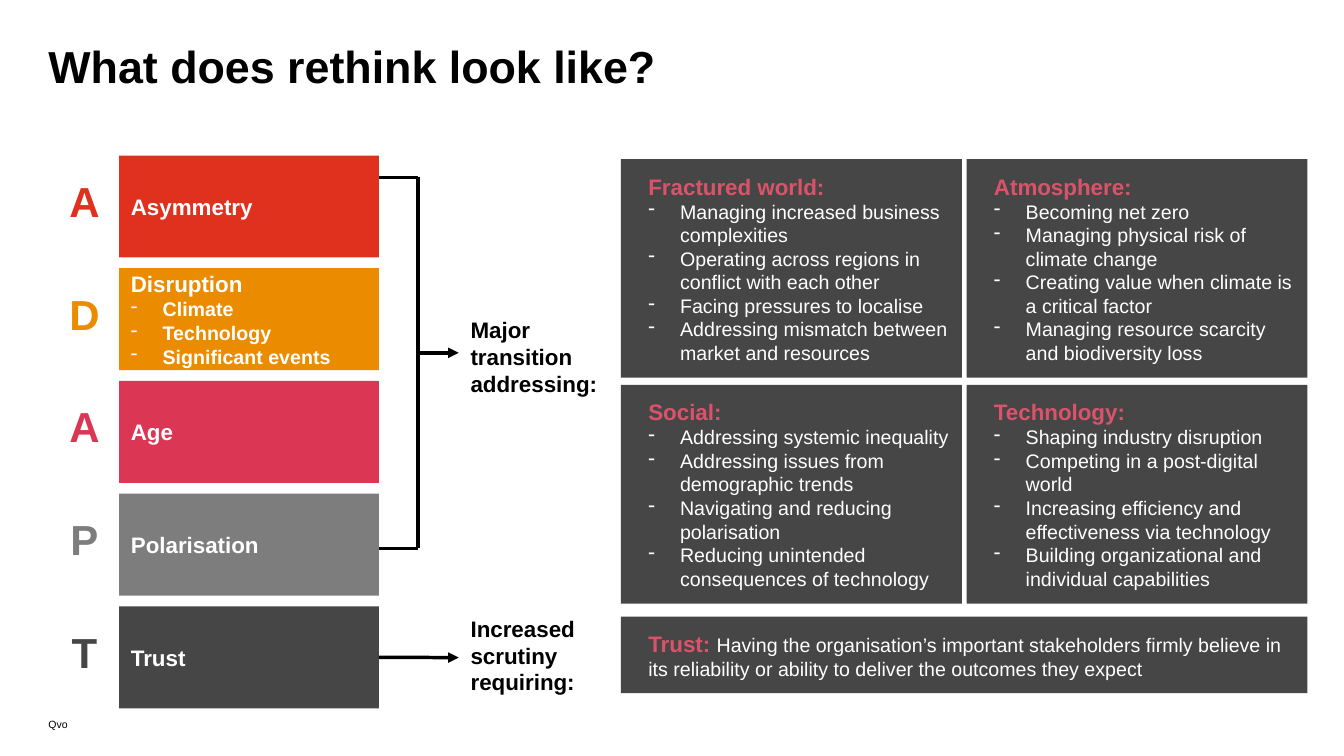
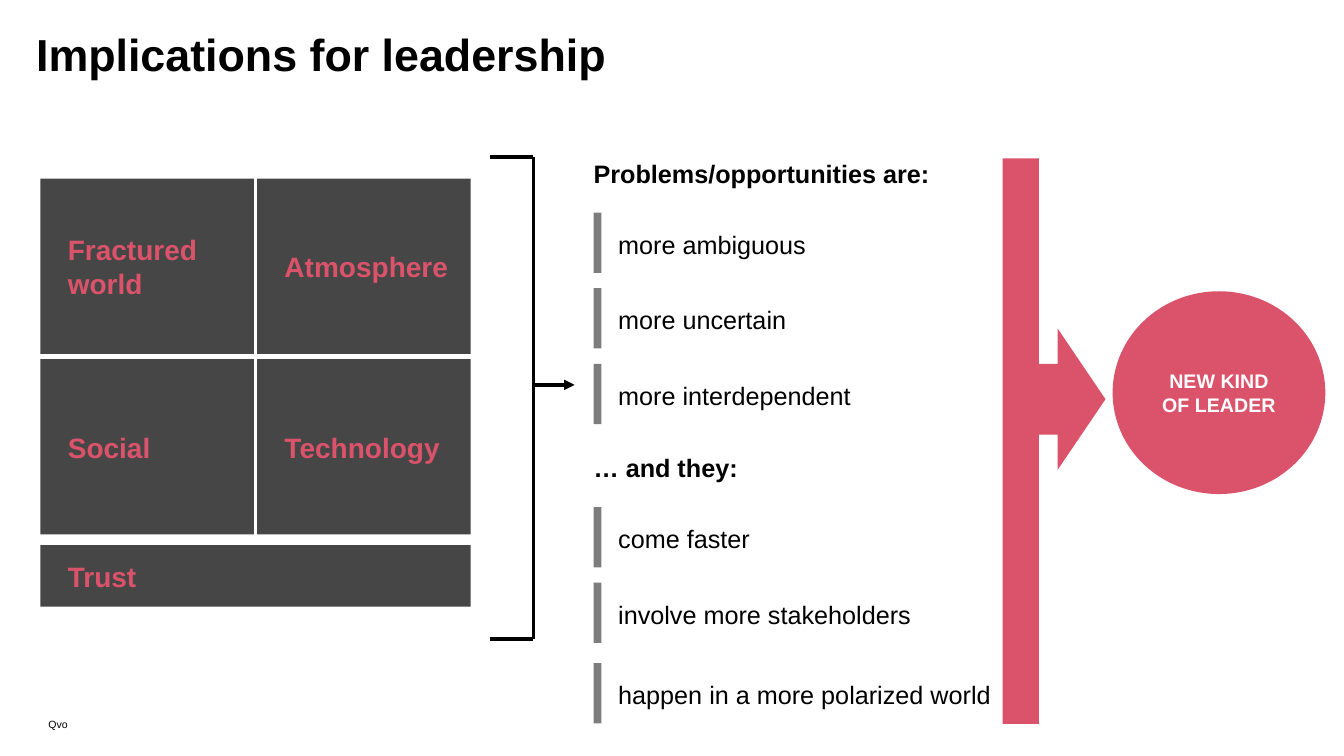
from lxml import etree
from pptx import Presentation
from pptx import util as u
from pptx.dml.color import RGBColor
from pptx.enum import shapes as sh, text as tx
from pptx.oxml import ns

Cm, Pt = u.Cm, u.Pt
FONT = "Arial"
BLACK = RGBColor(0x00, 0x00, 0x00)
WHITE = RGBColor(0xFF, 0xFF, 0xFF)
CHARCOAL = RGBColor(0x46, 0x46, 0x46)
GREY = RGBColor(0x7D, 0x7D, 0x7D)
RED = RGBColor(0xE0, 0x30, 0x1E)
ORANGE = RGBColor(0xEB, 0x8C, 0x00)
ROSE = RGBColor(0xDB, 0x37, 0x54)
PINK = RGBColor(0xDB, 0x53, 0x6A)

RECT, OVAL, ARROW = (sh.MSO_SHAPE.RECTANGLE, sh.MSO_SHAPE.OVAL,
                     sh.MSO_SHAPE.RIGHT_ARROW)
LEFT, CENTER = tx.PP_ALIGN.LEFT, tx.PP_ALIGN.CENTER
TOP, MIDDLE, BOTTOM = (tx.MSO_ANCHOR.TOP, tx.MSO_ANCHOR.MIDDLE,
                       tx.MSO_ANCHOR.BOTTOM)
NO_INSET = (0, 0, 0, 0)
BAR_INSET = (0.3, 0, 0, 0)
PANEL_INSET = (0.69, 0.08, 0.18, 0.08)
LIST_INSET = (0, 0.13, 0, 0.13)


def add_block(slide, box, paragraphs=(), fill=None, kind=RECT, inset=NO_INSET,
              anchor=MIDDLE, align=LEFT, spacing=None, after=None, holder=None):
    """Each paragraph is a list of runs (text, size, colour, bold);
    a leading "-" in the list makes it a bullet. Box and inset are in cm."""
    box = [Cm(v) for v in box]
    if holder is not None:
        block = holder
        block.left, block.top, block.width, block.height = box
    elif fill is None:
        block = slide.shapes.add_textbox(*box)
    else:
        block = slide.shapes.add_shape(kind, *box)
        block.shadow.inherit = False
        block.fill.solid()
        block.fill.fore_color.rgb = fill
        block.line.fill.background()
    frame = block.text_frame
    frame.word_wrap = True
    frame.auto_size = tx.MSO_AUTO_SIZE.NONE
    frame.vertical_anchor = anchor
    (frame.margin_left, frame.margin_top,
     frame.margin_right, frame.margin_bottom) = [Cm(v) for v in inset]
    for i, runs in enumerate(paragraphs):
        para = frame.add_paragraph() if i else frame.paragraphs[0]
        para.alignment = align
        if spacing:
            para.line_spacing = spacing
        if after:
            para.space_after = Pt(after)
        if runs[0] == "-":
            runs = runs[1:]
            props = para._p.get_or_add_pPr()
            props.set("marL", str(Cm(0.8)))
            props.set("indent", str(-Cm(0.8)))
            colour = etree.SubElement(props, ns.qn("a:buClr"))
            etree.SubElement(colour, ns.qn("a:srgbClr"), val=str(WHITE))
            etree.SubElement(props, ns.qn("a:buChar"), char="-")
        for words, size, colour, bold in runs:
            run = para.add_run()
            run.text = words
            run.font.name, run.font.size, run.font.bold = FONT, Pt(size), bold
            run.font.color.rgb = colour
    return block


def add_line(slide, x1, y1, x2, y2, arrow=False):
    line = slide.shapes.add_connector(
        sh.MSO_CONNECTOR.STRAIGHT, Cm(x1), Cm(y1), Cm(x2), Cm(y2))
    line.line.color.rgb = BLACK
    line.line.width = Pt(2.5)
    if arrow:
        etree.SubElement(line.line._get_or_add_ln(), ns.qn("a:tailEnd"),
                         type="triangle")
    etree.SubElement(line._element.spPr, ns.qn("a:effectLst"))
    return line


prs = Presentation()
prs.slide_width, prs.slide_height = Cm(33.87), Cm(19.05)

# Shared frame of both slides: title, footer, bracket with arrow
# (bracket: left, spine, top, bottom, arrow height, arrow tip)
frames = [
    ("What does rethink look like?", (1.22, 1.19, 31.4, 3.86),
     (9.45, 10.54, 4.47, 13.82, 8.89, 11.56)),
    ("Implications for leadership", (0.91, 0.89, 23.55, 2.9),
     (12.34, 13.44, 3.96, 16.1, 9.7, 14.48)),
]
slides = []
for title, title_box, (left, spine, top, bottom, mid, tip) in frames:
    slide = prs.slides.add_slide(prs.slide_layouts[5])
    add_block(slide, title_box, [[(title, 32, BLACK, True)]], anchor=TOP,
              spacing=0.85, holder=slide.shapes.title)
    add_block(slide, (1.22, 18.03, 15.21, 0.38),
              [[("Qvo", 7.5, BLACK, False)]], anchor=BOTTOM)
    for y in (top, bottom):
        add_line(slide, left, y, spine, y)
    add_line(slide, spine, top, spine, bottom)
    add_line(slide, spine, mid, tip, mid, arrow=True)
    slides.append(slide)
rethink, leadership = slides

# Rethink: the five ADAPT forces
forces = [
    ("Asymmetry", RED, []),
    ("Disruption", ORANGE, ["Climate", "Technology", "Significant events"]),
    ("Age", ROSE, []),
    ("Polarisation", GREY, []),
    ("Trust", CHARCOAL, []),
]
for i, (force, colour, examples) in enumerate(forces):
    top = 3.92 + 2.84 * i
    # The initial of Disruption is D, of Age A, and so on
    add_block(rethink, (1.7, top + 0.5, 0.86, 1.52),
              [[(force[0], 30, colour, True)]], anchor=TOP, align=CENTER)
    bar = add_block(rethink, (3, top, 6.55, 2.57),
                    [[(force, 16, WHITE, True)]]
                    + [["-", (e, 14, WHITE, True)] for e in examples],
                    fill=colour, inset=BAR_INSET)

# The last bar, Trust, leads to its own panel
trust_arrow = add_line(rethink, 9.55, 16.57, 11.56, 16.57, arrow=True)
trust_arrow.begin_connect(bar, 3)

for label, top, height in [("Major transition addressing:", 6.32, 5.33),
                           ("Increased scrutiny requiring:", 14.81, 3.4)]:
    add_block(rethink, (11.86, top, 3.81, height),
              [[(label, 16, BLACK, True)]])

# Rethink: challenge panels, two by two
challenges = [
    ("Fractured world", ["Managing increased business complexities",
                         "Operating across regions in conflict with each other",
                         "Facing pressures to localise",
                         "Addressing mismatch between market and resources"]),
    ("Atmosphere", ["Becoming net zero",
                    "Managing physical risk of climate change",
                    "Creating value when climate is a critical factor",
                    "Managing resource scarcity and biodiversity loss"]),
    ("Social", ["Addressing systemic inequality",
                "Addressing issues from demographic trends",
                "Navigating and reducing polarisation",
                "Reducing unintended consequences of technology"]),
    ("Technology", ["Shaping industry disruption",
                    "Competing in a post-digital world",
                    "Increasing efficiency and effectiveness via technology",
                    "Building organizational and individual capabilities"]),
]
for i, (challenge, points) in enumerate(challenges):
    row, col = divmod(i, 2)
    add_block(rethink, (15.65 + 8.71 * col, 4.01 + 5.69 * row, 8.59, 5.51),
              [[(challenge + ":", 16, PINK, True)]]
              + [["-", (point, 14, WHITE, False)] for point in points],
              fill=CHARCOAL, inset=PANEL_INSET)
    # The same grid, headings only, on the leadership slide
    add_block(leadership, (1.02 + 5.46 * col, 4.5 + 4.55 * row, 5.38, 4.42),
              [[(challenge, 20, PINK, True)]],
              fill=CHARCOAL, inset=PANEL_INSET)

# Trust panels under both grids
add_block(rethink, (15.65, 15.54, 17.3, 1.93),
          [[("Trust: ", 16, PINK, True),
            ("Having the organisation’s important stakeholders firmly believe "
             "in its reliability or ability to deliver the outcomes they expect",
             14, WHITE, False)]],
          fill=CHARCOAL, inset=PANEL_INSET)
add_block(leadership, (1.02, 13.74, 10.84, 1.55),
          [[("Trust", 20, PINK, True)]], fill=CHARCOAL, inset=PANEL_INSET)

# Leadership: headed statements with grey markers
statements = [
    ("Problems/opportunities are:", 3.78,
     [("more ambiguous", 5.36), ("more uncertain", 7.26),
      ("more interdependent", 9.17)]),
    ("… and they:", 11.18,
     [("come faster", 12.78), ("involve more stakeholders", 14.68),
      ("happen in a more polarized world", 16.71)]),
]
for heading, heading_top, lines in statements:
    add_block(leadership, (14.96, heading_top, 16.87, 1.78),
              [[(heading, 18, BLACK, True)]], inset=LIST_INSET, anchor=TOP,
              spacing=1.1)
    for statement, top in lines:
        add_block(leadership, (14.96, top, 0.2, 1.52), fill=GREY)
        add_block(leadership, (15.58, top - 0.13, 10.72, 1.78),
                  [[(statement, 18, BLACK, False)]], inset=LIST_INSET,
                  spacing=1.1)

# Leadership: the conclusion
add_block(leadership, (25.45, 8.28, 2.41, 3.56), fill=PINK, kind=ARROW)
add_block(leadership, (25.27, 3.99, 0.91, 14.25), fill=PINK)
add_block(leadership, (28.04, 7.34, 5.36, 5.11),
          [[("NEW KIND OF LEADER", 14, WHITE, True)]], fill=PINK, kind=OVAL,
          inset=(0.25, 0.25, 0.25, 0.25), align=CENTER, after=9)

prs.save("out.pptx")
